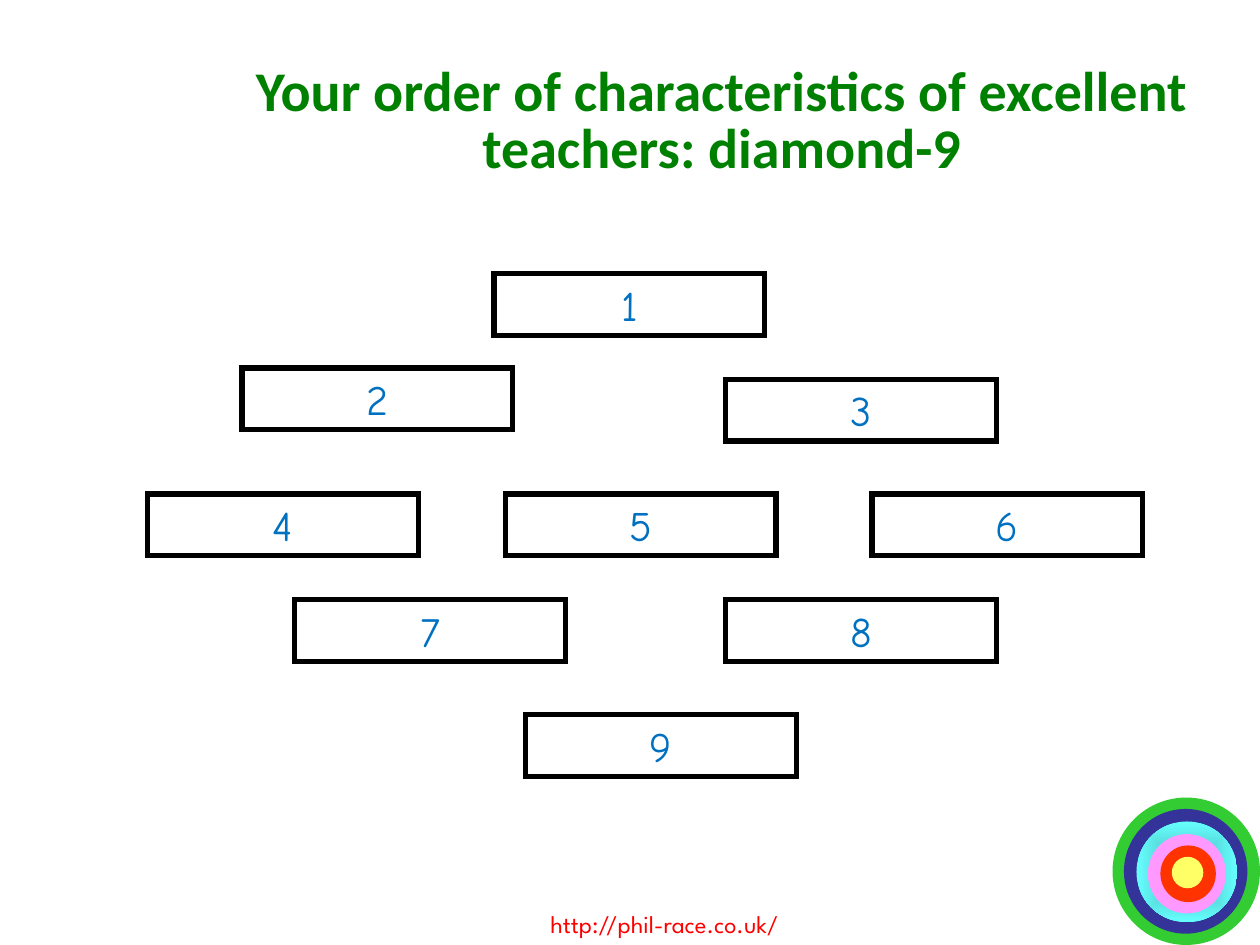
from lxml import etree
from pptx import Presentation
from pptx.dml.color import RGBColor
from pptx.enum.shapes import MSO_SHAPE as Shape
from pptx.enum.text import MSO_ANCHOR as Anchor, PP_ALIGN as Align
from pptx.oxml.ns import qn
from pptx.util import Inches, Pt

COLORS = {
    "title": "008000", "link": "FF0000", "number": "0070C0",
    "border": "000000", "box": "FFFFFF",
    "green": "33CC33", "navy": "333399", "teal": "47B2B2", "cyan": "66FFFF",
    "pink": "FF99FF", "red": "FF3300", "yellow": "FFFF66",
}


def color(name):
    return RGBColor.from_string(COLORS[name])


def write(shape, text, font_name, size, color_name, wrap=True):
    """Put one centred paragraph in the shape and return it."""
    frame = shape.text_frame
    frame.word_wrap = wrap
    frame.vertical_anchor = Anchor.MIDDLE
    paragraph = frame.paragraphs[0]
    paragraph.text = text
    paragraph.alignment = Align.CENTER
    paragraph.font.name = font_name
    paragraph.font.size = Pt(size)
    paragraph.font.color.rgb = color(color_name)
    return paragraph


presentation = Presentation()
presentation.slide_width = Inches(10)
presentation.slide_height = Inches(7.5)
slide = presentation.slides.add_slide(presentation.slide_layouts[6])
shapes = slide.shapes

# Concentric rings in the corner, outermost first: left, top, width, height
rings = [
    ("green", 8.83, 6.33, 1.17, 1.17),
    ("navy", 8.92, 6.42, 0.98, 0.99),
    ("cyan", 9.02, 6.52, 0.8, 0.8),
    ("pink", 9.11, 6.62, 0.62, 0.63),
    ("red", 9.21, 6.71, 0.44, 0.45),
    ("yellow", 9.3, 6.8, 0.25, 0.25),
]
for name, *bounds in rings:
    ring = shapes.add_shape(Shape.OVAL, *map(Inches, bounds))
    ring.shadow.inherit = False
    ring.line.fill.background()
    if name != "cyan":
        ring.fill.solid()
        ring.fill.fore_color.rgb = color(name)
        continue
    ring.fill.gradient()
    for stop, stop_color in zip(ring.fill.gradient_stops, ("teal", "cyan")):
        stop.color.rgb = color(stop_color)
    # Turn the linear gradient into one that spreads from the centre
    gradient = ring.element.spPr.find(qn("a:gradFill"))
    gradient.remove(gradient.find(qn("a:lin")))
    radial = etree.SubElement(gradient, qn("a:path"), {"path": "shape"})
    etree.SubElement(radial, qn("a:fillToRect"),
                     dict.fromkeys("ltrb", "50000"))

link = shapes.add_textbox(Inches(3.83), Inches(7.16), Inches(2.89), Inches(0.34))
write(link, "http://phil-race.co.uk/", "League Spartan", 14, "link")

title = shapes.add_textbox(Inches(1.46), Inches(0.38), Inches(8.54), Inches(1.19))
heading = write(title, "Your order of characteristics of excellent teachers: diamond-9",
                "Calibri", 32, "title")
heading.font.bold = True
heading.line_spacing = 0.85

# Left and top of the boxes, in ranking order
boxes = [
    (3.92, 2.17),
    (1.92, 2.92), (5.76, 3.01),
    (1.17, 3.92), (4.01, 3.92), (6.92, 3.92),
    (2.34, 4.76), (5.76, 4.76),
    (4.17, 5.67),
]
for rank, (left, top) in enumerate(boxes, start=1):
    box = shapes.add_shape(Shape.RECTANGLE, Inches(left), Inches(top),
                           Inches(2.15), Inches(0.49))
    box.shadow.inherit = False
    if rank == 7:
        box.fill.solid()
        box.fill.fore_color.rgb = color("box")
    else:
        box.fill.background()
    box.line.color.rgb = color("border")
    box.line.width = Pt(3)
    # Square corners on the border
    etree.SubElement(box.line._get_or_add_ln(), qn("a:miter"), {"lim": "800000"})
    write(box, str(rank), "Comic Neue", 24, "number", wrap=False)

presentation.save("out.pptx")
